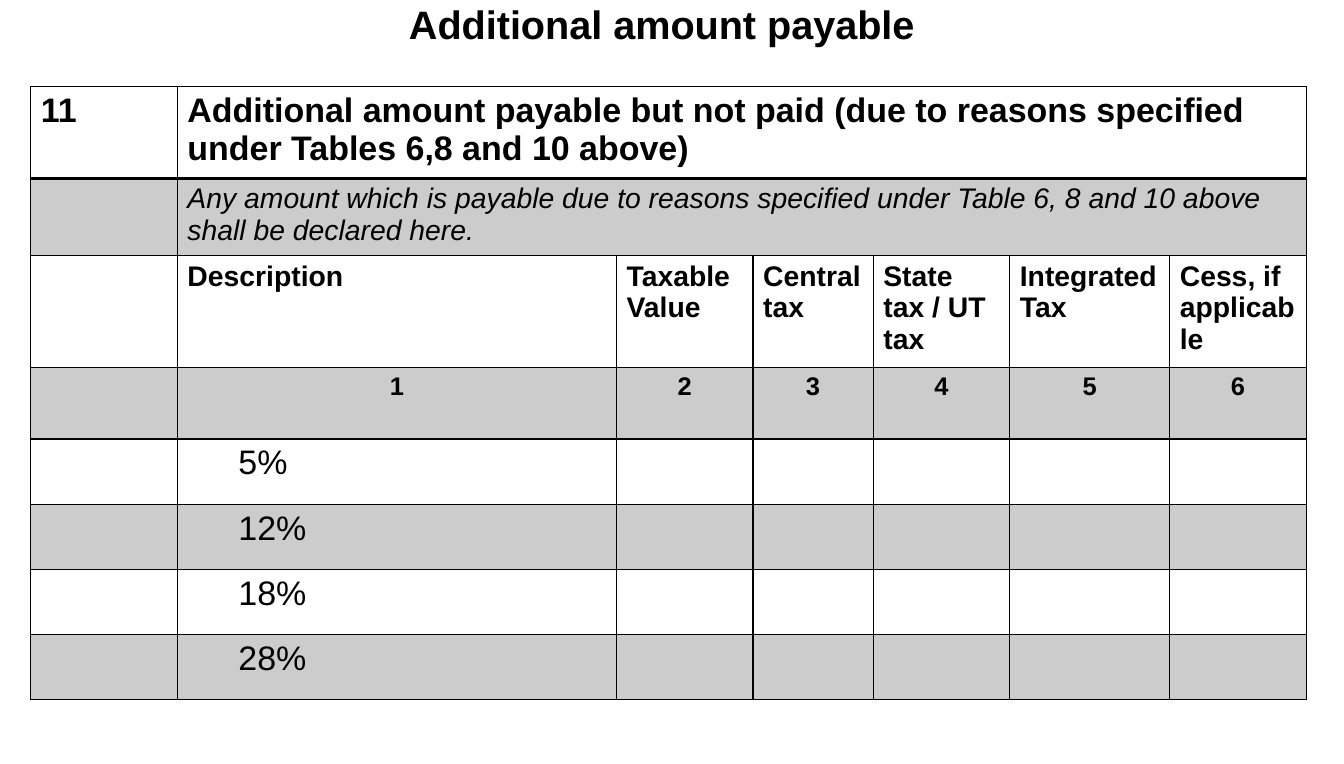
"""Build the slide on additional amount payable."""
from lxml import etree
from pptx import Presentation
from pptx import util as u
from pptx.dml.color import RGBColor
from pptx.enum import text
from pptx.oxml import ns

BLACK = RGBColor(0x00, 0x00, 0x00)
WHITE = RGBColor(0xFF, 0xFF, 0xFF)
GREY = RGBColor(0xCC, 0xCC, 0xCC)

COLS = [1.44, 4.31, 1.34, 1.18, 1.34, 1.57, 1.34]
ROWS = [0.9, 0.76, 1.1, 0.7] + [0.64] * 4
HEADS = ["Description", "Taxable Value", "Central tax", "State tax / UT tax",
         "Integrated Tax", "Cess, if applicable"]
RATES = ["5%", "12%", "18%", "28%"]
LEAD = "Additional amount payable but not paid (due to reasons specified under Tables 6,8 and 10 above)"
NOTE = ("Any amount which is payable due to reasons specified under Table 6, 8 and 10 above "
        "shall be declared here.")


class Deck:
    """Hold the style and the current slide."""

    def __init__(self, wide, high, font, ink):
        self.deck = Presentation()
        self.deck.slide_width = u.Inches(wide)
        self.deck.slide_height = u.Inches(high)
        self.font, self.ink = font, ink
        self.slide = self.deck.slides.add_slide(self.deck.slide_layouts[5])

    def style(self, para, size, bold=False, slant=False, mid=False):
        """Format one paragraph."""
        para.font.name = self.font
        para.font.size = u.Pt(size)
        para.font.bold = bold
        para.font.italic = slant
        para.font.color.rgb = self.ink
        para.alignment = text.PP_ALIGN.CENTER if mid else text.PP_ALIGN.LEFT

    def title(self, words, left, top, width, height):
        """Place the slide title."""
        box = self.slide.shapes.title
        box.left, box.top = u.Inches(left), u.Inches(top)
        box.width, box.height = u.Inches(width), u.Inches(height)
        frame = box.text_frame
        frame.text = words
        frame.auto_size = text.MSO_AUTO_SIZE.NONE
        frame.vertical_anchor = text.MSO_ANCHOR.MIDDLE
        self.style(frame.paragraphs[0], 28, bold=True, mid=True)

    def table(self, left, top, cols, rows):
        """Add a ruled table with every second row shaded."""
        grid = self.slide.shapes.add_table(
            len(rows), len(cols), u.Inches(left), u.Inches(top),
            u.Inches(sum(cols)), u.Inches(sum(rows))).table
        grid.first_row = grid.horz_banding = False
        for col, width in zip(grid.columns, cols):
            col.width = u.Inches(width)
        for row, height in zip(grid.rows, rows):
            row.height = u.Inches(height)
        for r in range(len(rows)):
            for c in range(len(cols)):
                cell = grid.cell(r, c)
                self.rule(cell, {"L": 1, "R": 1, "T": 2 if r == 1 else 1,
                                 "B": 2 if r == 0 else 1})
                cell.fill.solid()
                cell.fill.fore_color.rgb = GREY if r % 2 else WHITE
        return grid

    def rule(self, cell, sides):
        """Draw the borders of one cell."""
        props = cell._tc.get_or_add_tcPr()
        for side, width in sides.items():
            line = etree.SubElement(props, ns.qn("a:ln" + side), w=str(u.Pt(width)))
            fill = etree.SubElement(line, ns.qn("a:solidFill"))
            etree.SubElement(fill, ns.qn("a:srgbClr"), val=str(self.ink))

    def label(self, cell, words, size, indent=0, **look):
        """Fill one cell with text."""
        cell.text = words
        para = cell.text_frame.paragraphs[0]
        self.style(para, size, **look)
        if indent:
            para._p.get_or_add_pPr().set("marL", str(u.Inches(indent)))

    def save(self):
        """Save the deck."""
        self.deck.save("out.pptx")


def main():
    """Build and save the slide."""
    deck = Deck(13.19, 7.5, "Arial", BLACK)
    deck.title("Additional amount payable", 0.45, -0.05, 12.09, 0.57)
    grid = deck.table(0.3, 0.85, COLS, ROWS)
    for r in range(2):
        grid.cell(r, 1).merge(grid.cell(r, len(COLS) - 1))
    deck.label(grid.cell(0, 0), "11", 24, bold=True)
    deck.label(grid.cell(0, 1), LEAD, 24, bold=True)
    deck.label(grid.cell(1, 1), NOTE, 20, slant=True)
    for c, head in enumerate(HEADS, 1):
        deck.label(grid.cell(2, c), head, 20, bold=True)
        deck.label(grid.cell(3, c), str(c), 18, bold=True, mid=True)
    for r, rate in enumerate(RATES, 4):
        deck.label(grid.cell(r, 1), rate, 24, indent=0.5)
    deck.save()


if __name__ == "__main__":
    main()
